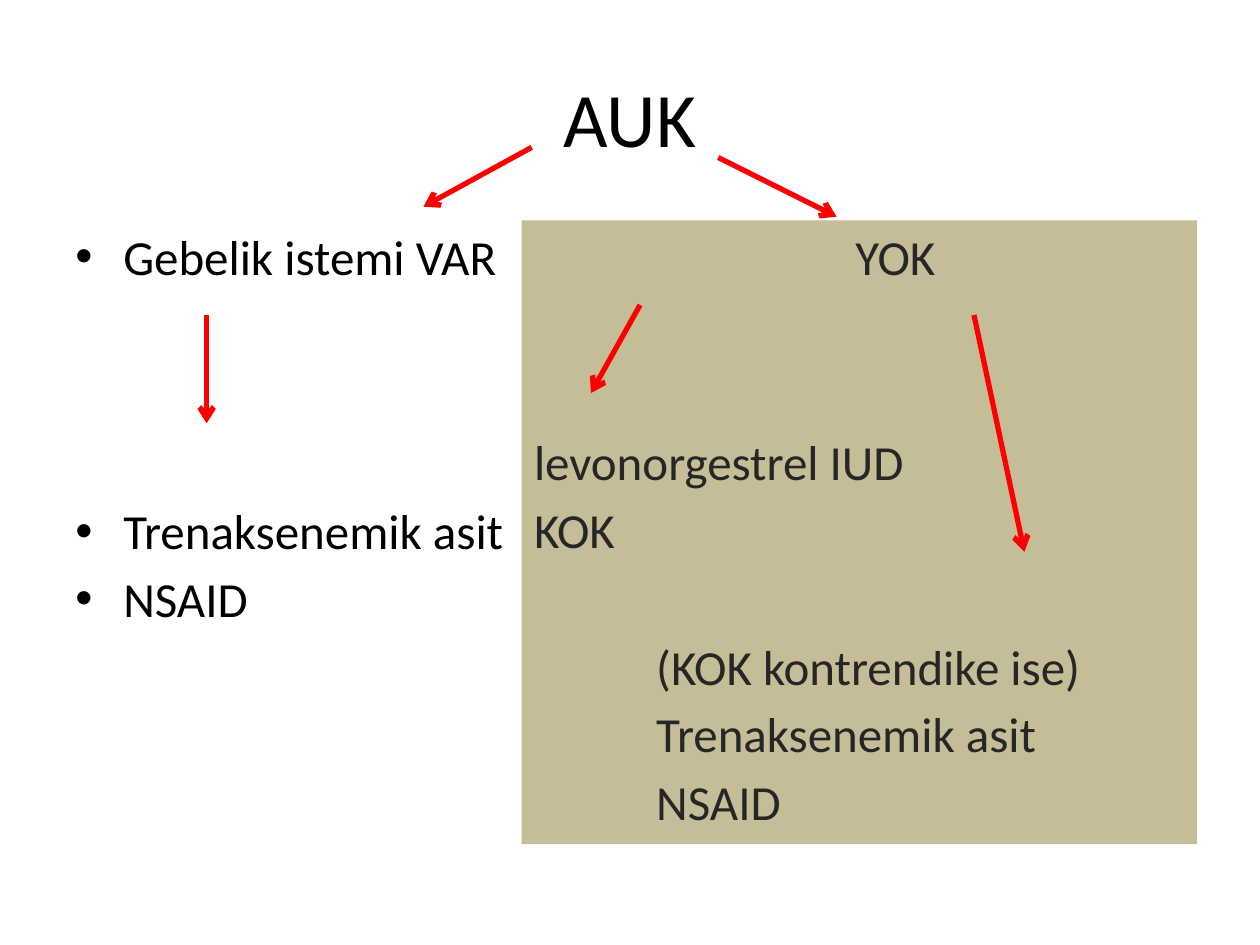
import pptx
import pptx.util
import pptx.dml.color
import pptx.enum.shapes
import pptx.enum.text
import pptx.oxml
import pptx.oxml.ns

WIDE = pptx.util.Inches(10)
HIGH = pptx.util.Inches(7.5)
FONT = "Calibri"
SIZE = 28
SPACE = 5.1
PITCH = 39.3
TOP = 23.33
TALL = 66
COLORS = {"ink": "000000", "dark": "262626", "sand": "C4BD97", "red": "FF0000"}

WANTED = [("Gebelik istemi VAR", 0), ("Trenaksenemik asit", 3), ("NSAID", 0)]
UNWANTED = [
    ("YOK", 0, 2.55),
    ("levonorgestrel IUD", 2, 0),
    ("KOK", 0, 0),
    ("(KOK kontrendike ise)", 1, 0.97),
    ("Trenaksenemik asit", 0, 0.97),
    ("NSAID", 0, 0.97),
]
ARROWS = [
    (42.2, 15.6, 33.6, 21.87),
    (50.8, 32.27, 46.9, 41.6),
    (16.4, 33.33, 16.4, 44.8),
    (57, 16.67, 66.4, 22.93),
    (77.3, 33.33, 81.3, 58.4),
]


def across(share):
    return int(WIDE * share / 100)


def down(share):
    return int(HIGH * share / 100)


def tint(name):
    return pptx.dml.color.RGBColor.from_string(COLORS[name])


def style(para, size, color):
    for run in para.runs:
        run.font.name = FONT
        run.font.size = pptx.util.Pt(size)
        run.font.color.rgb = tint(color)


def add_title(slide, text):
    title = slide.shapes.title
    title.left, title.top = across(5), down(4)
    title.width, title.height = across(90), down(16.67)
    frame = title.text_frame
    frame.text = text
    frame.vertical_anchor = pptx.enum.text.MSO_ANCHOR.MIDDLE
    para = frame.paragraphs[0]
    para.alignment = pptx.enum.text.PP_ALIGN.CENTER
    style(para, 44, "ink")


def add_box(slide, left, width):
    box = slide.shapes.add_textbox(across(left), down(TOP), across(width), down(TALL))
    box.text_frame.word_wrap = True
    return box


def add_line(frame, index, text, skip, color):
    para = frame.paragraphs[0] if index == 0 else frame.add_paragraph()
    para.text = text
    para.space_before = pptx.util.Pt(SPACE + skip * PITCH)
    style(para, SIZE, color)
    return para._p.get_or_add_pPr()


def add_list(slide):
    frame = add_box(slide, 5, 44.2).text_frame
    hang = pptx.util.Inches(0.38)
    for index, (text, skip) in enumerate(WANTED):
        props = add_line(frame, index, text, skip, "ink")
        props.set("marL", str(hang))
        props.set("indent", str(-hang))
        font = pptx.oxml.ns.qn("a:buFont")
        props.append(props.makeelement(font, {"typeface": "Arial"}))
        mark = pptx.oxml.ns.qn("a:buChar")
        props.append(props.makeelement(mark, {"char": "•"}))


def add_panel(slide):
    box = add_box(slide, 41.4, 53.6)
    box.fill.solid()
    box.fill.fore_color.rgb = tint("sand")
    for index, (text, skip, inset) in enumerate(UNWANTED):
        props = add_line(box.text_frame, index, text, skip, "dark")
        props.set("marL", str(pptx.util.Inches(inset)))


def add_arrow(slide, left, top, right, base):
    kind = pptx.enum.shapes.MSO_CONNECTOR.STRAIGHT
    arrow = slide.shapes.add_connector(
        kind, across(left), down(top), across(right), down(base)
    )
    arrow.line.color.rgb = tint("red")
    arrow.line.width = pptx.util.Pt(3)
    line = arrow.line._get_or_add_ln()
    tail = pptx.oxml.ns.qn("a:tailEnd")
    line.append(line.makeelement(tail, {"type": "arrow"}))
    props = arrow._element.spPr
    props.append(props.makeelement(pptx.oxml.ns.qn("a:effectLst"), {}))


def main():
    deck = pptx.Presentation()
    deck.slide_width, deck.slide_height = WIDE, HIGH
    slide = deck.slides.add_slide(deck.slide_layouts[5])
    add_title(slide, "AUK")
    add_list(slide)
    add_panel(slide)
    for ends in ARROWS:
        add_arrow(slide, *ends)
    deck.save("out.pptx")


if __name__ == "__main__":
    main()
